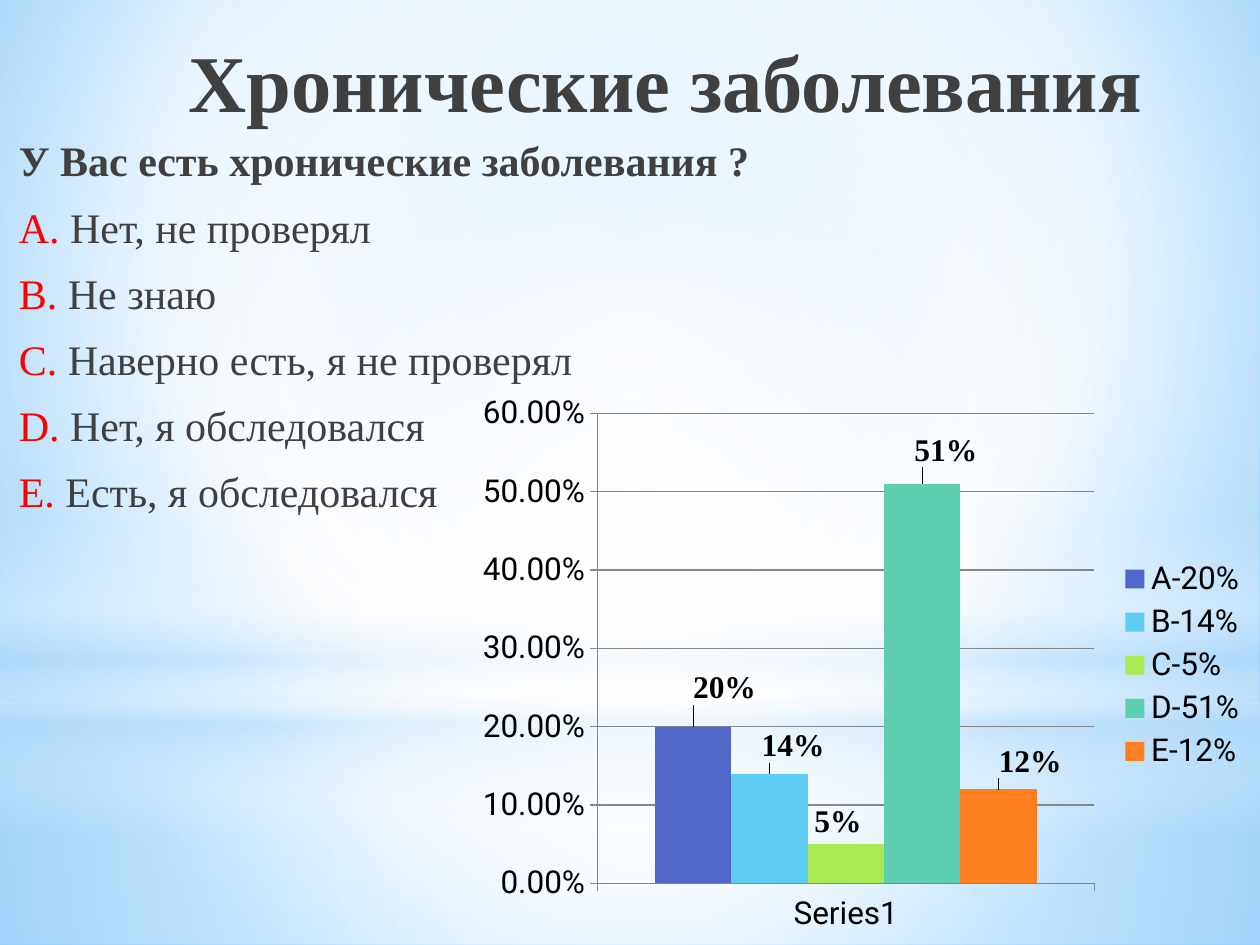
from dataclasses import dataclass

from lxml.etree import SubElement
from pptx import Presentation
from pptx.chart.data import CategoryChartData
from pptx.dml.color import RGBColor
from pptx.enum.chart import XL_CHART_TYPE, XL_LABEL_POSITION, XL_LEGEND_POSITION, XL_TICK_MARK
from pptx.enum.shapes import MSO_SHAPE
from pptx.enum.text import MSO_ANCHOR, PP_ALIGN
from pptx.oxml import parse_xml
from pptx.oxml.ns import nsdecls, qn
from pptx.util import Inches, Pt


@dataclass(frozen=True)
class Theme:
    text_font: str = "Times New Roman"
    chart_font: str = "Roboto"
    text: str = "404040"
    letter: str = "FF0000"
    chart_text: str = "000000"
    grid: str = "878787"
    white: str = "FFFFFF"
    haze: str = "B4DCFA"
    title_size: int = 46
    body_size: int = 24
    chart_size: int = 18


THEME = Theme()
CENTER = (50, 50, 50, 50)

# Gradient stops: position, colour, opacity (percent)
BACKGROUND = [(0, "9ED5FF", 100), (60, THEME.white, 100), (100, "5BB9FF", 100)]
TITLE_STOPS = [(0, "000000", 100), (40, THEME.text, 100), (100, "212745", 65)]
LOWER_GLOW = [(0, THEME.white, 91), (37, THEME.white, 76), (100, THEME.haze, 79)]
UPPER_GLOW = [(0, THEME.white, 89), (48, THEME.white, 62), (100, THEME.haze, 79)]
HORIZON = [(0, THEME.white, 0), (29, THEME.white, 30), (45, THEME.haze, 40),
           (55, THEME.white, 26), (65, THEME.haze, 60), (100, THEME.white, 0)]
HALO = [(0, THEME.white, 100), (56, THEME.white, 0)]

QUESTION = "У Вас есть хронические заболевания ?"
ANSWERS = [
    ("А.", " Нет, не проверял"),
    ("В.", " Не знаю"),
    ("С.", " Наверно есть, я не проверял"),
    ("D.", " Нет, я обследовался"),
    ("Е.", " Есть, я обследовался"),
]

# Letter, share, colour, label shift as a fraction of the chart
SERIES = [
    ("A", 0.20, "4E67C8", (0.04, -0.03)),
    ("B", 0.14, "5ECCF3", (0.03, -0.01)),
    ("C", 0.05, "A7EA52", (-0.01, 0)),
    ("D", 0.51, "5DCEAF", (0.03, -0.02)),
    ("E", 0.12, "FF8021", (0.04, -0.01)),
]


def gradient(stops, focus=None):
    """Circular gradient towards focus, or a vertical one without it."""
    items = "".join(
        f'<a:gs pos="{position * 1000}"><a:srgbClr val="{color}">'
        f'<a:alpha val="{opacity * 1000}"/></a:srgbClr></a:gs>'
        for position, color, opacity in stops)
    if focus:
        left, top, right, bottom = (value * 1000 for value in focus)
        direction = (f'<a:path path="circle"><a:fillToRect l="{left}" t="{top}" '
                     f'r="{right}" b="{bottom}"/></a:path>')
    else:
        direction = '<a:lin ang="5400000" scaled="0"/>'
    return parse_xml(f'<a:gradFill {nsdecls("a")} rotWithShape="1">'
                     f'<a:gsLst>{items}</a:gsLst>{direction}</a:gradFill>')


def replace_solid(element, new_fill):
    solid = element.find(".//" + qn("a:solidFill"))
    solid.getparent().replace(solid, new_fill)


def add_glow(slide, kind, top, height, stops, focus=CENTER):
    shape = slide.shapes.add_shape(kind, 0, Inches(top), Inches(10), Inches(height))
    shape.shadow.inherit = False
    shape.line.fill.background()
    shape.fill.solid()
    replace_solid(shape.element, gradient(stops, focus))


def add_text_box(slide, left, top, width, height, inset_left, inset_top):
    box = slide.shapes.add_textbox(Inches(left), Inches(top), Inches(width), Inches(height))
    frame = box.text_frame
    frame.word_wrap = True
    frame.vertical_anchor = MSO_ANCHOR.TOP
    frame.margin_left = Inches(inset_left)
    frame.margin_top = Inches(inset_top)
    return box


def style_font(font, name, size, color, bold=False):
    font.name = name
    font.size = Pt(size)
    font.bold = bold
    font.color.rgb = RGBColor.from_string(color)


def add_run(paragraph, text, size, color, bold=False):
    run = paragraph.add_run()
    run.text = text
    style_font(run.font, THEME.text_font, size, color, bold)


def add_title(slide):
    box = add_text_box(slide, 0.59, 0.13, 8.57, 1.25, 0.1, 0.12)
    paragraph = box.text_frame.paragraphs[0]
    paragraph.alignment = PP_ALIGN.RIGHT
    add_run(paragraph, "Хронические заболевания", THEME.title_size, THEME.text, True)
    replace_solid(box.element, gradient(TITLE_STOPS))


def add_question(slide):
    frame = add_text_box(slide, 0, 0.99, 10, 3.15, 0.15, 0.08).text_frame
    add_run(frame.paragraphs[0], QUESTION, THEME.body_size, THEME.text, True)
    for letter, answer in ANSWERS:
        paragraph = frame.add_paragraph()
        add_run(paragraph, letter, THEME.body_size, THEME.letter)
        add_run(paragraph, answer, THEME.body_size, THEME.text)
    for paragraph in frame.paragraphs:
        paragraph.space_before = Pt(6)
        paragraph.space_after = Pt(3)


def manual_layout(**settings):
    layout = parse_xml(f'<c:layout {nsdecls("c")}><c:manualLayout/></c:layout>')
    for name, value in settings.items():
        SubElement(layout[0], qn(f"c:{name}")).set("val", str(value))
    return layout


def style_series(series, share, color):
    series.format.fill.solid()
    series.format.fill.fore_color.rgb = RGBColor.from_string(color)
    label = series.points[0].data_label
    add_run(label.text_frame.paragraphs[0], f"{share:.0%}",
            THEME.chart_size, THEME.chart_text, True)
    label.position = XL_LABEL_POSITION.OUTSIDE_END


def add_share_chart(slide):
    data = CategoryChartData(number_format="0.00%")
    data.categories = ["Series1"]
    for letter, share, _, _ in SERIES:
        data.add_series(f"{letter}-{share:.0%}", [share])
    chart = slide.shapes.add_chart(
        XL_CHART_TYPE.COLUMN_CLUSTERED, Inches(3.74), Inches(3.06),
        Inches(6.26), Inches(4.44), data).chart
    style_font(chart.font, THEME.chart_font, THEME.chart_size, THEME.chart_text)
    chart.has_title = False
    chart.has_legend = True
    chart.legend.position = XL_LEGEND_POSITION.RIGHT
    chart.legend.include_in_layout = False

    # Axes and gridlines
    value_axis = chart.value_axis
    value_axis.minimum_scale, value_axis.maximum_scale = 0, 0.6
    value_axis.major_unit = 0.1
    value_axis.has_major_gridlines = True
    value_axis.tick_labels.number_format = "0.00%"
    value_axis.tick_labels.number_format_is_linked = False
    for axis in (value_axis, chart.category_axis):
        axis.major_tick_mark = XL_TICK_MARK.OUTSIDE
    for line in (value_axis.format.line, chart.category_axis.format.line,
                 value_axis.major_gridlines.format.line):
        line.color.rgb = RGBColor.from_string(THEME.grid)
        line.width = Pt(0.75)

    # Columns and their labels
    plot = chart.plots[0]
    plot.gap_width = 150
    plot.overlap = 0
    plot.vary_by_categories = False
    for series, (_, share, color, _) in zip(plot.series, SERIES):
        style_series(series, share, color)
    labels = chart.element.findall(".//" + qn("c:dLbl"))
    for label, (_, _, _, (shift_x, shift_y)) in zip(labels, SERIES):
        label.insert(1, manual_layout(x=shift_x, y=shift_y))

    # Plot area
    plot_area = chart.element.find(".//" + qn("c:plotArea"))
    for layout in plot_area.findall(qn("c:layout")):
        plot_area.remove(layout)
    plot_area.insert(0, manual_layout(layoutTarget="inner", xMode="edge", yMode="edge",
                                      x=0.16, y=0.05, w=0.63, h=0.84))


def main():
    presentation = Presentation()
    presentation.slide_width, presentation.slide_height = Inches(10), Inches(7.5)
    slide = presentation.slides.add_slide(presentation.slide_layouts[6])

    # Background glows
    slide.background.fill.solid()
    replace_solid(slide.element, gradient(BACKGROUND, (20, 10, 20, 60)))
    add_glow(slide, MSO_SHAPE.RECTANGLE, 5.58, 1.92, LOWER_GLOW)
    add_glow(slide, MSO_SHAPE.RECTANGLE, 0, 5.58, UPPER_GLOW)
    add_glow(slide, MSO_SHAPE.RECTANGLE, 4.12, 2.5, HORIZON, None)
    add_glow(slide, MSO_SHAPE.OVAL, 1.75, 5.58, HALO)

    # Content
    add_title(slide)
    add_question(slide)
    add_share_chart(slide)
    presentation.save("out.pptx")


if __name__ == "__main__":
    main()
